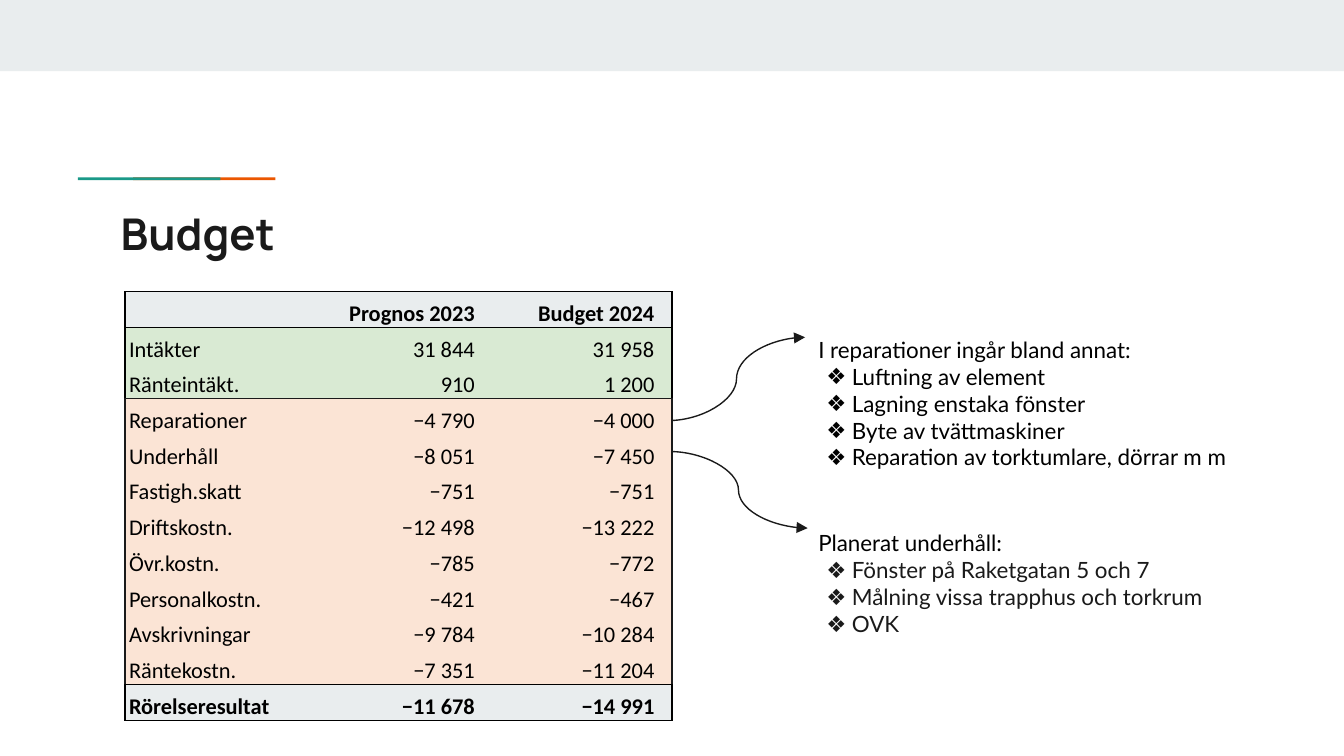
from dataclasses import dataclass

from lxml import etree
from pptx import Presentation
from pptx.dml.color import RGBColor
from pptx.enum.shapes import MSO_CONNECTOR, MSO_SHAPE
from pptx.enum.text import MSO_ANCHOR, MSO_AUTO_SIZE, PP_ALIGN
from pptx.oxml.ns import qn
from pptx.util import Inches, Pt

CURVE = MSO_CONNECTOR.CURVE
RECTANGLE = MSO_SHAPE.RECTANGLE
MIDDLE, BOTTOM = MSO_ANCHOR.MIDDLE, MSO_ANCHOR.BOTTOM
FIT_SHAPE = MSO_AUTO_SIZE.SHAPE_TO_FIT_TEXT
LEFT, RIGHT = PP_ALIGN.LEFT, PP_ALIGN.RIGHT
PLAIN_TABLE = "{2D5ABB26-0587-4C30-8999-92F81FD0307C}"


@dataclass(frozen=True)
class Theme:
    """Colours, fonts and sizes of the slide."""
    black: str = "000000"
    ink: str = "1A1A1A"
    grey: str = "E9EDEE"
    green: str = "D9EAD3"
    peach: str = "FBE4D5"
    teal: str = "1A9988"
    orange: str = "EB5600"
    title_font: str = "Manrope"
    note_font: str = "Lato"
    table_font: str = "Calibri"
    title_size: float = 23.4
    body_size: float = 12
    line_width: float = 0.75


THEME = Theme()
COLUMN_SHARES = (1.22, 1.42, 1.44)
SECTIONS = (
    (THEME.grey, THEME.black, True, (("", "Prognos 2023", "Budget 2024"),)),
    (THEME.green, THEME.black, False, (
        ("Intäkter", "31 844", "31 958"),
        ("Ränteintäkt.", "910", "1 200"),
    )),
    (THEME.peach, THEME.ink, False, (
        ("Reparationer", "−4 790", "−4 000"),
        ("Underhåll", "−8 051", "−7 450"),
        ("Fastigh.skatt", "−751", "−751"),
        ("Driftskostn.", "−12 498", "−13 222"),
        ("Övr.kostn.", "−785", "−772"),
        ("Personalkostn.", "−421", "−467"),
        ("Avskrivningar", "−9 784", "−10 284"),
        ("Räntekostn.", "−7 351", "−11 204"),
    )),
    (THEME.grey, THEME.black, True, (("Rörelseresultat", "−11 678", "−14 991"),)),
)
REPAIRS = ("Luftning av element", "Lagning enstaka fönster",
           "Byte av tvättmaskiner", "Reparation av torktumlare, dörrar m m")
MAINTENANCE = ("Fönster på Raketgatan 5 och 7",
               "Målning vissa trapphus och torkrum", "OVK")


def write_text(paragraph, text, *, font, size=THEME.body_size, color=THEME.black,
               bold=False, align=LEFT, spacing=1.0, bullet=None):
    """Fill a paragraph with formatted text."""
    if bullet:
        properties = paragraph._p.get_or_add_pPr()
        properties.set("marL", str(Inches(0.25)))
        properties.set("indent", str(Inches(-0.19)))
        bullet_color = etree.SubElement(properties, qn("a:buClr"))
        etree.SubElement(bullet_color, qn("a:srgbClr"), val=color)
        etree.SubElement(properties, qn("a:buSzPts"), val=str(int(size * 100)))
        etree.SubElement(properties, qn("a:buFont"), typeface=font)
        etree.SubElement(properties, qn("a:buChar"), char=bullet)
    paragraph.text = text
    paragraph.alignment = align
    paragraph.line_spacing = spacing
    for target in (paragraph, *paragraph.runs):
        target.font.name = font
        target.font.size = Pt(size)
        target.font.bold = bold
        target.font.color.rgb = RGBColor.from_string(color)


def add_bar(slide, left, top, width, height, color):
    """Add a plain filled rectangle."""
    bar = slide.shapes.add_shape(RECTANGLE, Inches(left), Inches(top),
                                 Inches(width), Inches(height))
    bar.shadow.inherit = False
    bar.fill.solid()
    bar.fill.fore_color.rgb = RGBColor.from_string(color)
    bar.line.fill.background()


def add_text_frame(slide, left, top, width, height):
    """Add a wrapping text box and return its text frame."""
    box = slide.shapes.add_textbox(Inches(left), Inches(top), Inches(width), Inches(height))
    frame = box.text_frame
    frame.word_wrap = True
    frame.margin_left = frame.margin_right = Inches(0.1)
    frame.margin_top = frame.margin_bottom = Inches(0.1)
    return frame


def add_header(slide, left, top, width):
    """Add the top band, the two-coloured accent and the title."""
    add_bar(slide, left, top, width, 0.53, THEME.grey)
    add_bar(slide, left + 0.99, top + 1.32, 1.06, 0.02, THEME.orange)
    add_bar(slide, left + 0.58, top + 1.32, 1.06, 0.02, THEME.teal)
    frame = add_text_frame(slide, left + 0.8, top + 1.44, 8.41, 0.59)
    frame.vertical_anchor = MIDDLE
    write_text(frame.paragraphs[0], "Budget", font=THEME.title_font,
               size=THEME.title_size, color=THEME.ink, bold=True)


def add_note(slide, left, top, width, height, heading, items, item_color):
    """Add a heading with a bulleted list below it."""
    frame = add_text_frame(slide, left, top, width, height)
    frame.auto_size = FIT_SHAPE
    write_text(frame.paragraphs[0], heading, font=THEME.note_font, spacing=1.5)
    for item in items:
        write_text(frame.add_paragraph(), item, font=THEME.note_font,
                   color=item_color, bullet="❖")


def set_borders(cell, sides, color):
    """Draw the chosen sides of a cell and hide the others."""
    properties = cell._tc.get_or_add_tcPr()
    for position, side in enumerate("LRTB"):
        line = etree.Element(qn(f"a:ln{side}"), w=str(Pt(THEME.line_width)))
        if side in sides:
            fill = etree.SubElement(line, qn("a:solidFill"))
            etree.SubElement(fill, qn("a:srgbClr"), val=color)
        else:
            etree.SubElement(line, qn("a:noFill"))
        properties.insert(position, line)


def add_budget_table(slide, left, top, width, height):
    """Add the budget table, with a frame around each section."""
    row_count = sum(len(section[-1]) for section in SECTIONS)
    last_column = len(COLUMN_SHARES) - 1
    frame = slide.shapes.add_table(row_count, len(COLUMN_SHARES), Inches(left),
                                   Inches(top), Inches(width), Inches(height))
    table = frame.table
    table.first_row = table.horz_banding = False
    table._tbl.tblPr.find(qn("a:tableStyleId")).text = PLAIN_TABLE
    for column, share in zip(table.columns, COLUMN_SHARES):
        column.width = Inches(width * share / sum(COLUMN_SHARES))
    rows = iter(table.rows)
    for fill, border, bold, records in SECTIONS:
        for index, record in enumerate(records):
            row = next(rows)
            row.height = Inches(height / row_count)
            edges = "T" * (index == 0) + "B" * (index == len(records) - 1)
            for column, (cell, text) in enumerate(zip(row.cells, record)):
                cell.margin_left = Inches(0.03)
                cell.margin_right = Inches(0.13 if column == last_column else 0.03)
                cell.margin_top = cell.margin_bottom = 0
                cell.vertical_anchor = BOTTOM
                cell.fill.solid()
                cell.fill.fore_color.rgb = RGBColor.from_string(fill)
                sides = edges + "L" * (column == 0) + "R" * (column == last_column)
                set_borders(cell, sides, border)
                write_text(cell.text_frame.paragraphs[0], text, font=THEME.table_font,
                           bold=bold, align=RIGHT if column else LEFT, spacing=1.15)


def add_curved_arrow(slide, start, end):
    """Add a curved arrow between two points."""
    arrow = slide.shapes.add_connector(CURVE, *map(Inches, (*start, *end)))
    arrow.line.color.rgb = RGBColor.from_string(THEME.ink)
    arrow.line.width = Pt(THEME.line_width)
    etree.SubElement(arrow.line._get_or_add_ln(), qn("a:tailEnd"), type="triangle")
    etree.SubElement(arrow._element.spPr, qn("a:effectLst"))


def main():
    """Build and save the budget slide."""
    presentation = Presentation()
    presentation.slide_width = Inches(10)
    presentation.slide_height = Inches(10 * 9 / 16)
    slide = presentation.slides.add_slide(presentation.slide_layouts[6])
    add_header(slide, 0, 0, 10)
    add_note(slide, 5.99, 2.3, 3.57, 1.31, "I reparationer ingår bland annat:",
             REPAIRS, THEME.black)
    add_note(slide, 5.99, 3.74, 3.47, 1.11, "Planerat underhåll:",
             MAINTENANCE, THEME.ink)
    add_curved_arrow(slide, (4.97, 3.13), (5.99, 2.51))
    add_curved_arrow(slide, (4.98, 3.36), (6.01, 3.93))
    add_budget_table(slide, 0.93, 2.17, 4.07, 3.19)
    presentation.save("out.pptx")


if __name__ == "__main__":
    main()
